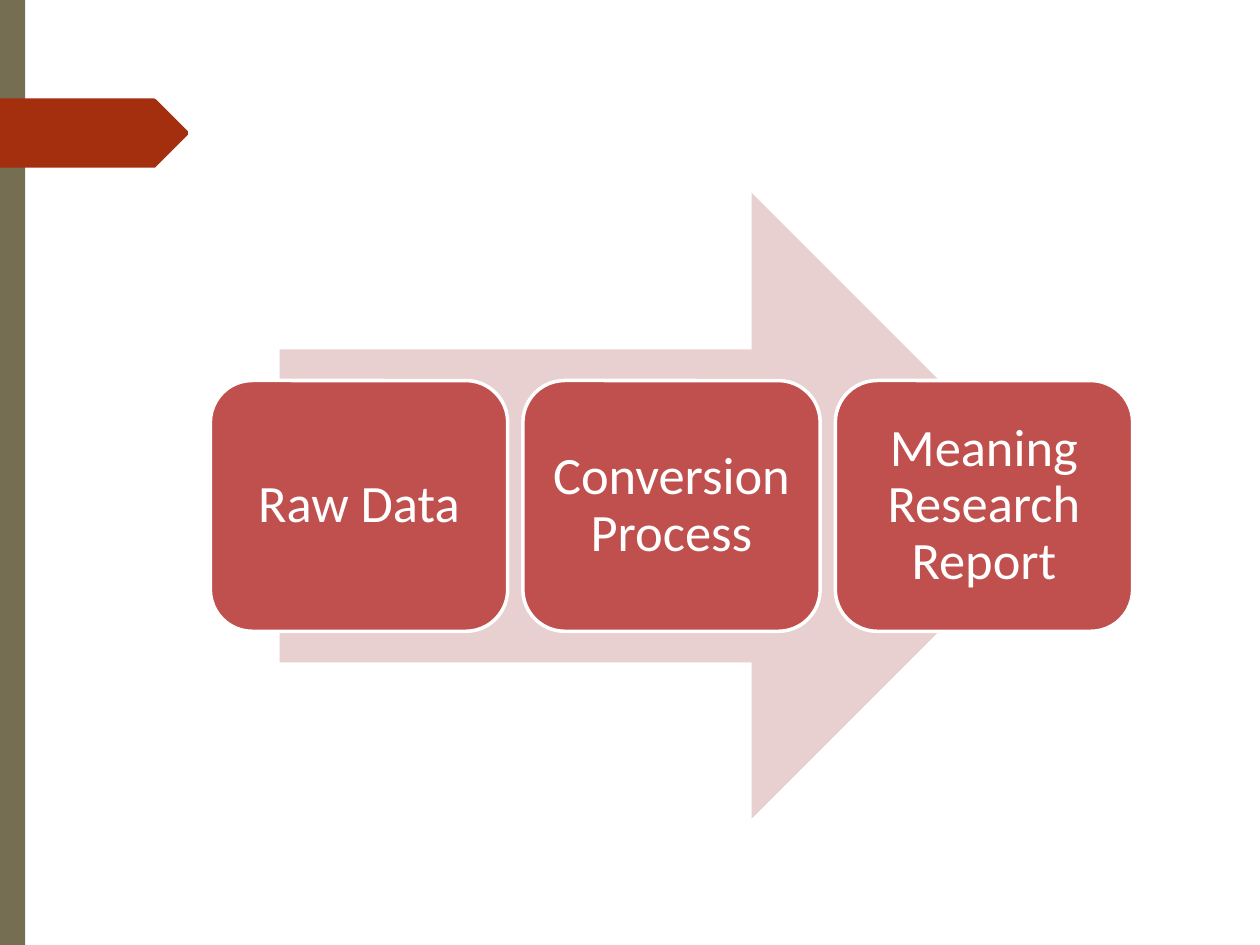
from dataclasses import dataclass

import pptx
import pptx.dml.color
import pptx.enum.shapes
import pptx.enum.text
import pptx.util

Inches = pptx.util.Inches
Pt = pptx.util.Pt
MSO_SHAPE = pptx.enum.shapes.MSO_SHAPE

OLIVE, RUST, PINK, RED, WHITE = "756E53", "A42F0F", "E8D0D0", "C0504D", "FFFFFF"
STEP_LEFT, STEP_PITCH = 1.67, 2.48


@dataclass
class Box:
    left: float
    top: float
    width: float
    height: float


def rgb(value: str):
    return pptx.dml.color.RGBColor.from_string(value)


def style(sp, fill: str, line: str = "") -> None:
    sp.shadow.inherit = False
    sp.fill.solid()
    sp.fill.fore_color.rgb = rgb(fill)
    if line:
        sp.line.color.rgb = rgb(line)
        sp.line.width = Pt(2)
    else:
        sp.line.fill.background()


def add_shape(s, kind, box: Box, fill: str, line: str = ""):
    sp = s.shapes.add_shape(kind, Inches(box.left), Inches(box.top),
                            Inches(box.width), Inches(box.height))
    style(sp, fill, line)
    return sp


def add_tab(s) -> None:
    """Draw the pointed tab on the left edge."""
    points = [(0, 0.78), (0, 1.33), (1.23, 1.33), (1.49, 1.07),
              (1.49, 1.04), (1.24, 0.79), (1.22, 0.78)]
    start, *rest = [(Inches(x), Inches(y)) for x, y in points]
    builder = s.shapes.build_freeform(*start)
    builder.add_line_segments(rest, close=True)
    style(builder.convert_to_shape(), RUST)


def add_step(s, index: int, text: str) -> None:
    box = Box(STEP_LEFT + index * STEP_PITCH, 3.02, 2.36, 1.99)
    sp = add_shape(s, MSO_SHAPE.ROUNDED_RECTANGLE, box, RED, WHITE)
    tf = sp.text_frame
    tf.word_wrap = True
    tf.vertical_anchor = pptx.enum.text.MSO_ANCHOR.MIDDLE
    tf.margin_left = tf.margin_right = Inches(0.12)
    tf.margin_top = tf.margin_bottom = Inches(0.12)
    p = tf.paragraphs[0]
    p.text = text
    p.alignment = pptx.enum.text.PP_ALIGN.CENTER
    p.line_spacing = 0.9
    p.font.name = "Calibri"
    p.font.size = Pt(30)
    p.font.color.rgb = rgb(WHITE)


def main() -> None:
    prs = pptx.Presentation()
    prs.slide_width, prs.slide_height = Inches(10), Inches(7.5)
    s = prs.slides.add_slide(prs.slide_layouts[6])
    add_shape(s, MSO_SHAPE.RECTANGLE, Box(0, 0, 0.2, 7.5), OLIVE)
    add_tab(s)
    add_shape(s, MSO_SHAPE.RIGHT_ARROW, Box(2.22, 1.53, 6.23, 4.97), PINK)
    steps = ["Raw Data", "Conversion Process", "Meaning Research Report"]
    for index, text in enumerate(steps):
        add_step(s, index, text)
    prs.save("out.pptx")


if __name__ == "__main__":
    main()
